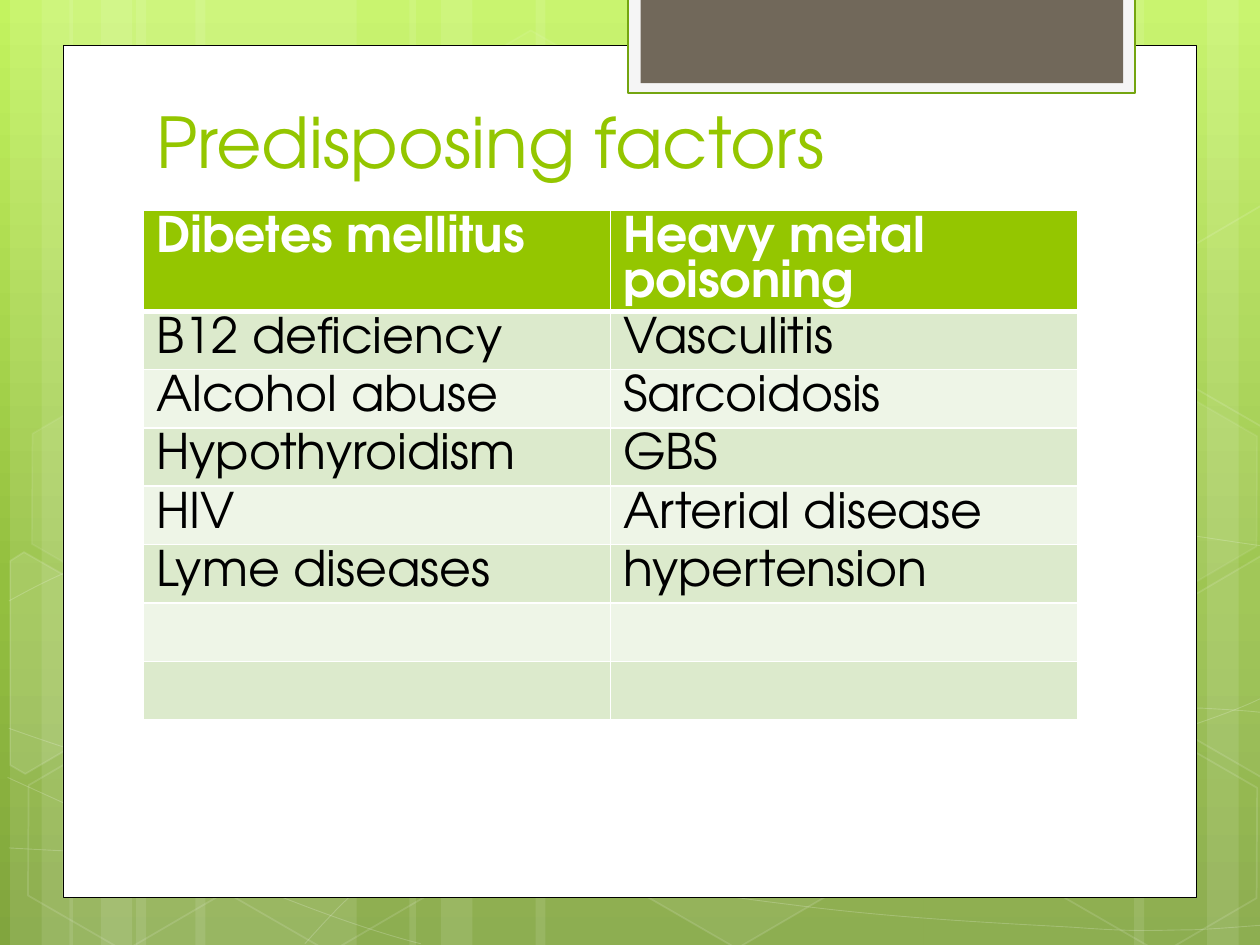
from copy import deepcopy
from math import cos, radians, sin
from lxml.etree import SubElement
from pptx import Presentation
from pptx.dml.color import RGBColor
from pptx.enum.shapes import MSO_SHAPE
from pptx.enum.text import MSO_ANCHOR
from pptx.oxml import parse_xml
from pptx.oxml.ns import nsdecls, qn
from pptx.util import Inches, Pt

WHITE = RGBColor(0xFF, 0xFF, 0xFF)
BLACK = RGBColor(0x00, 0x00, 0x00)
LIME = RGBColor(0x94, 0xC6, 0x00)
OLIVE = RGBColor(0x74, 0xA5, 0x10)
SMOKE = RGBColor(0xF5, 0xF5, 0xF5)
TAUPE = RGBColor(0x71, 0x68, 0x5A)
PALE = RGBColor(0xEE, 0xF5, 0xE7)
MINT = RGBColor(0xDC, 0xEA, 0xCC)
SKY = [(0, RGBColor(0xC3, 0xF3, 0x5F)), (0.62, RGBColor(0x93, 0xBF, 0x3F)),
       (1, RGBColor(0x81, 0xA5, 0x3E))]
FACE = "TeX Gyre Adventor"

deck = Presentation()
deck.slide_width, deck.slide_height = Inches(10), Inches(7.5)
COL = deck.slide_width / 1000
ROW = deck.slide_height / 750
slide = deck.slides.add_slide(deck.slide_layouts[6])
shapes = slide.shapes


def paint(shape, fill=None, clear=100, line=None, width=1, faint=100):
    shape.shadow.inherit = False
    shape.line.width = Pt(width)
    ends = ((shape.fill, fill, clear, ""), (shape.line.fill, line, faint, "a:ln/"))
    for part, tone, share, way in ends:
        if tone is None:
            part.background()
            continue
        part.solid()
        part.fore_color.rgb = tone
        if share < 100:
            color = shape._element.spPr.xpath(way + "a:solidFill/a:srgbClr")[0]
            SubElement(color, qn("a:alpha"), val=str(share * 1000))


def trace(points, close):
    spots = [(round(x * COL), round(y * ROW)) for x, y in points]
    pen = shapes.build_freeform(*spots[0])
    pen.add_line_segments(spots[1:], close=close)
    return pen.convert_to_shape()


back = slide.background.fill
back.gradient()
back.gradient_angle = 270
stops = slide.element.find(".//" + qn("a:gsLst"))
stops.append(deepcopy(stops[0]))
for stop, (place, tone) in zip(back.gradient_stops, SKY):
    stop.position = place
    stop.color.rgb = tone

bands = [(108, 175, 0), (8, 50, 0), (33, 83, 0), (155, 175, 0), (55, 50, 0), (80, 83, 0),
         (733, 175, 180), (958, 50, 180), (900, 83, 180), (425, 308, 0), (325, 50, 0), (350, 83, 0)]
for left, wide, turn in bands:
    band = shapes.add_shape(MSO_SHAPE.RECTANGLE, round(left * COL), 0,
                            round(wide * COL), deck.slide_height)
    band.rotation = turn
    paint(band, WHITE, 10)

curves = [
    [(7, 673), (61, 676), (115, 679), (190, 678), (265, 677), (358, 675), (458, 665),
     (558, 655), (700, 636), (792, 617), (883, 598), (977, 568), (1007, 551)],
    [(7, 477), (36, 461), (65, 446), (121, 431), (178, 416), (259, 394), (347, 387),
     (436, 380), (544, 379), (654, 387), (764, 395), (947, 426), (1007, 434)],
    [(6, 617), (127, 672), (247, 727), (334, 749)],
    [(7, 578), (38, 589), (70, 600), (128, 616), (186, 631), (273, 656), (357, 673),
     (440, 690), (545, 708), (628, 718), (711, 729), (800, 733), (853, 736),
     (905, 740), (919, 738), (945, 738), (971, 737), (989, 735), (1007, 734)],
    [(242, 749), (260, 729), (278, 709), (302, 691), (326, 673), (360, 653), (388, 639),
     (416, 625), (433, 619), (470, 609), (506, 599), (573, 585), (608, 578),
     (644, 571), (649, 571), (680, 569), (711, 566), (760, 563), (794, 562),
     (829, 561), (886, 562), (886, 562), (908, 562), (931, 562), (953, 562),
     (971, 563), (988, 564), (997, 565), (1006, 566), (1003, 565), (1006, 566)],
]
for knots in curves:
    curve = trace(knots, False)
    route = curve._element.find(".//" + qn("a:path"))
    legs = route.findall(qn("a:lnTo"))
    for n in range(0, len(legs), 3):
        bend = SubElement(route, qn("a:cubicBezTo"))
        for leg in legs[n:n + 3]:
            bend.append(leg[0])
            route.remove(leg)
    paint(curve, line=WHITE, width=0.5, faint=20)

combs = [(334, 36, 4, 8), (497, 589, 6, 12), (11, 591, None, 12), (14, 312, 7, 8),
         (174, 592, None, 12), (753, 453, 10, 12), (834, 593, None, 12), (834, 314, 7, 8)]
for left, top, clear, faint in combs:
    comb = shapes.add_shape(MSO_SHAPE.HEXAGON, round(left * COL), round(top * ROW),
                            round(175 * COL), round(152 * ROW))
    comb.adjustments[0] = 0.285
    comb.rotation = 30
    paint(comb, WHITE if clear else None, clear or 100, WHITE, 1, faint)

TURN = 30
shards = [
    ((36, 535), [(8, 445), (19, 438), (96, 482), (95, 570), (20, 614), (8, 607)], 10),
    ((985, 520), [(926, 485), (1001, 441), (1009, 446), (1009, 613), (1002, 617), (926, 573)], 4),
    ((985, 241), [(926, 207), (1001, 163), (1010, 168), (1009, 335), (1002, 339), (926, 295)], None),
]
co, si = cos(radians(TURN)), sin(radians(TURN))
for (mx, my), points, clear in shards:
    flat = [(mx + (x - mx) * co + (y - my) * si, my - (x - mx) * si + (y - my) * co)
            for x, y in points]
    shard = trace(flat, True)
    shard.rotation = TURN
    paint(shard, WHITE if clear else None, clear or 100, WHITE, 1, 12)

panels = [((50, 36, 900, 676.5), dict(fill=WHITE, line=BLACK, width=0.5)),
          ((498.5, -2, 402, 76), dict(fill=SMOKE, line=OLIVE, width=1.25)),
          ((508.5, -2, 383, 68), dict(fill=TAUPE))]
for (left, top, wide, tall), style in panels:
    panel = shapes.add_shape(MSO_SHAPE.RECTANGLE, round(left * COL), round(top * ROW),
                             round(wide * COL), round(tall * ROW))
    paint(panel, **style)

title = shapes.add_textbox(round(114 * COL), round(67 * ROW), round(768 * COL), round(83 * ROW))
frame = title.text_frame
for key, value in dict(word_wrap=True, vertical_anchor=MSO_ANCHOR.BOTTOM).items():
    setattr(frame, key, value)
run = frame.paragraphs[0].add_run()
run.text = "Predisposing factors"
for key, value in dict(name=FACE, size=Pt(40)).items():
    setattr(run.font, key, value)
run.font.color.rgb = LIME

factors = [("Dibetes mellitus", "Heavy metal poisoning"), ("B12 deficiency", "Vasculitis"),
           ("Alcohol abuse", "Sarcoidosis"), ("Hypothyroidism", "GBS"),
           ("HIV", "Arterial disease"), ("Lyme diseases", "hypertension"), ("", ""), ("", "")]
heights = [80] + [46.3] * 7
grid = shapes.add_table(len(factors), 2, round(114 * COL), round(167 * ROW),
                        round(741 * COL), round(sum(heights) * ROW)).table
for r, pair in enumerate(factors):
    head = r == 0
    grid.rows[r].height = round(heights[r] * ROW)
    for c, words in enumerate(pair):
        cell = grid.cell(r, c)
        cell.margin_bottom = round(2 * ROW)
        trim = cell._tc.get_or_add_tcPr()
        for side in "LRTB":
            thick = Pt(3 if side == "B" and head or side == "T" and r == 1 else 1)
            trim.append(parse_xml(f'<a:ln{side} {nsdecls("a")} w="{thick}"><a:solidFill>'
                                  f'<a:srgbClr val="{WHITE}"/></a:solidFill></a:ln{side}>'))
        cell.fill.solid()
        cell.fill.fore_color.rgb = LIME if head else MINT if r % 2 else PALE
        if words:
            line = cell.text_frame.paragraphs[0]
            line.line_spacing = Pt(25.7)
            run = line.add_run()
            run.text = words
            for key, value in dict(name=FACE, size=Pt(28), bold=head).items():
                setattr(run.font, key, value)
            run.font.color.rgb = WHITE if head else BLACK

deck.save("out.pptx")
